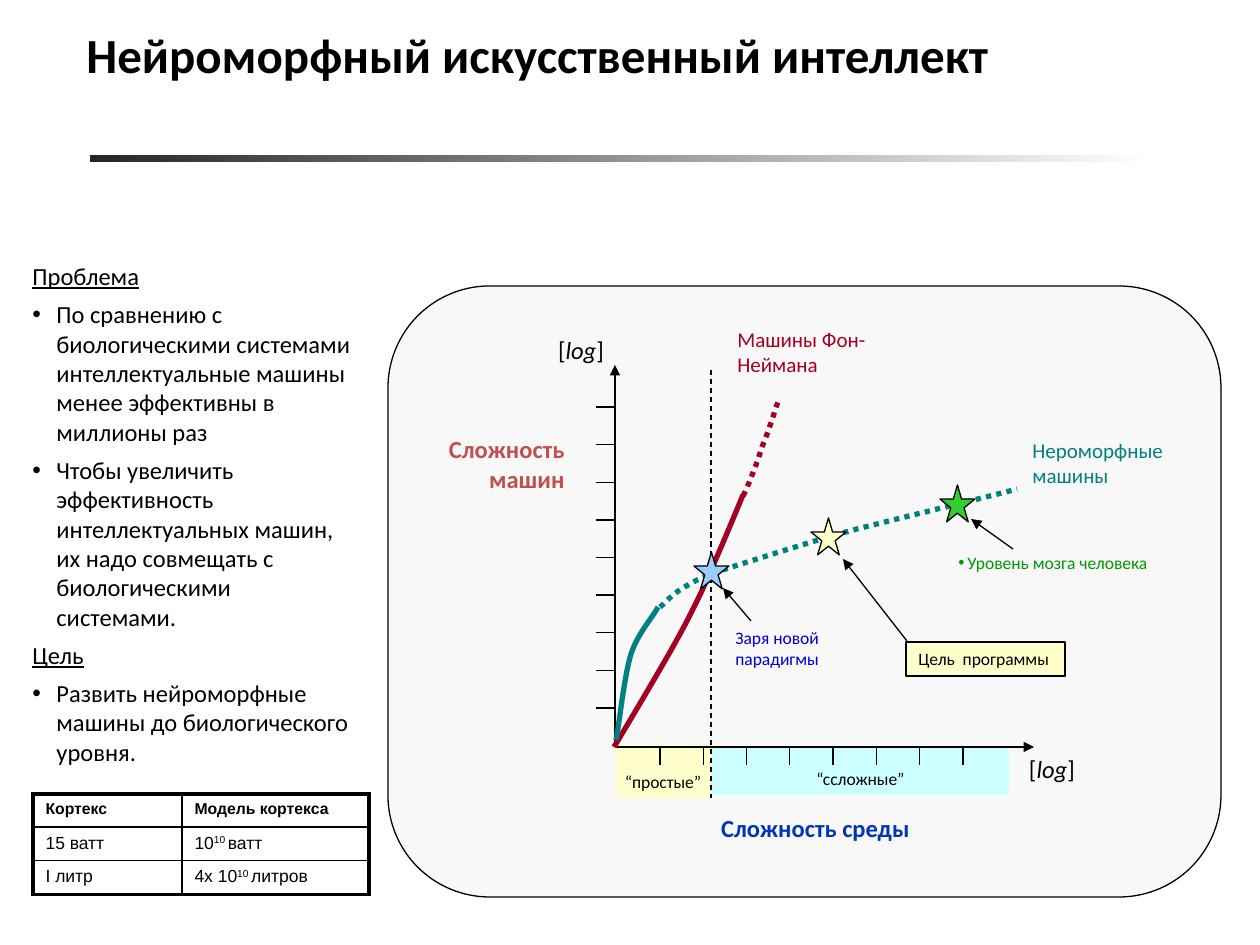
from lxml import etree
from pptx import Presentation
from pptx.dml.color import RGBColor
from pptx.enum.dml import MSO_LINE
from pptx.enum.shapes import MSO_CONNECTOR, MSO_SHAPE
from pptx.enum.text import MSO_ANCHOR, PP_ALIGN
from pptx.oxml.ns import qn
from pptx.util import Emu, Pt

PX = 914400 / 126
STRAIGHT = MSO_CONNECTOR.STRAIGHT
RECT, ROUND_RECT, STAR = MSO_SHAPE.RECTANGLE, MSO_SHAPE.ROUNDED_RECTANGLE, MSO_SHAPE.STAR_5_POINT
DASH, DOTS = MSO_LINE.DASH, MSO_LINE.ROUND_DOT
LEFT, CENTER, RIGHT = PP_ALIGN.LEFT, PP_ALIGN.CENTER, PP_ALIGN.RIGHT
TOP, MIDDLE, BOTTOM = MSO_ANCHOR.TOP, MSO_ANCHOR.MIDDLE, MSO_ANCHOR.BOTTOM

BLACK = RGBColor(0x00, 0x00, 0x00)
WHITE = RGBColor(0xFF, 0xFF, 0xFF)
CHARCOAL = RGBColor(0x26, 0x26, 0x26)
PANEL_GRAY = RGBColor(0xF8, 0xF8, 0xF8)
CRIMSON = RGBColor(0xA5, 0x00, 0x21)
TEAL = RGBColor(0x00, 0x80, 0x80)
BRICK = RGBColor(0xC0, 0x50, 0x4D)
GREEN = RGBColor(0x00, 0x99, 0x00)
STAR_GREEN = RGBColor(0x33, 0xCC, 0x33)
BLUE = RGBColor(0x00, 0x00, 0xCC)
ROYAL = RGBColor(0x02, 0x35, 0xB4)
SKY = RGBColor(0x99, 0xCC, 0xFF)
CREAM = RGBColor(0xFF, 0xFF, 0xCC)
AQUA = RGBColor(0xCC, 0xFF, 0xFF)

presentation = Presentation()
presentation.slide_width, presentation.slide_height = Emu(9144000), Emu(6858000)
slide = presentation.slides.add_slide(presentation.slide_layouts[6])
shapes = slide.shapes


def write(text, paragraph, size=14, color=BLACK, font="Calibri", bold=False,
          italic=False, underline=False, raised=False, align=LEFT, bullet=0):
    """Add one run; bullet is the hanging indent in px."""
    run = paragraph.add_run()
    run.text = text
    run.font.size, run.font.name = Pt(size), font
    run.font.bold, run.font.italic, run.font.underline = bold, italic, underline
    run.font.color.rgb = color
    if raised:
        run.font._element.set("baseline", "30000")
    paragraph.alignment = align
    if bullet:
        properties = paragraph._p.get_or_add_pPr()
        properties.set("marL", str(int(bullet * PX)))
        properties.set("indent", str(int(-bullet * PX)))
        etree.SubElement(properties, qn("a:buFont")).set("typeface", "Arial")
        etree.SubElement(properties, qn("a:buChar")).set("char", "•")


def draw_line(x1, y1, x2, y2, width=0.75, dash=None, arrow=False):
    line = shapes.add_connector(STRAIGHT, *(Emu(int(v * PX)) for v in (x1, y1, x2, y2)))
    line.line.color.rgb, line.line.width = BLACK, Pt(width)
    if dash:
        line.line.dash_style = dash
    properties = line._element.spPr
    if arrow:
        etree.SubElement(properties.find(qn("a:ln")), qn("a:tailEnd")).set("type", "triangle")
    etree.SubElement(properties, qn("a:effectLst"))


# Title rule, panel, zones under the axis and the goal box
blocks = [
    (RECT, 90, 155, 1061, 7, None, False, "", BOTTOM),
    (ROUND_RECT, 388, 286, 833, 611, PANEL_GRAY, True, "", BOTTOM),
    (RECT, 616, 745, 94, 53, CREAM, False, "“простые”", BOTTOM),
    (RECT, 712, 746, 297, 49, AQUA, False, "“cсложные”", BOTTOM),
    (RECT, 906, 642, 159, 34, CREAM, True, "Цель  программы", TOP),
]
for kind, x, y, w, h, color, outlined, caption, anchor in blocks:
    block = shapes.add_shape(kind, *(Emu(int(v * PX)) for v in (x, y, w, h)))
    block.shadow.inherit = False
    if color:
        block.fill.solid()
        block.fill.fore_color.rgb = color
    else:
        block.fill.gradient()
        block.fill.gradient_angle = 0
        for stop, shade, position in zip(block.fill.gradient_stops, (CHARCOAL, WHITE), (0, 1)):
            stop.color.rgb, stop.position = shade, position
    if outlined:
        block.line.color.rgb, block.line.width = BLACK, Pt(0.75)
    else:
        block.line.fill.background()
    if caption:
        block.text_frame.word_wrap = False
        block.text_frame.vertical_anchor = anchor
        write(caption, block.text_frame.paragraphs[0], size=10,
              align=LEFT if outlined else CENTER)

# Axes with ticks, and the border between the zones
draw_line(615, 747, 615, 365, width=1, arrow=True)
draw_line(615, 747, 1034, 747, width=1, arrow=True)
draw_line(711, 370, 711, 798, dash=DASH)
for i in range(9):
    tick_y = 407 + 301 * i / 8
    draw_line(615, tick_y, 596, tick_y)
for i in range(8):
    tick_x = 660 + 303 * i / 7
    draw_line(tick_x, 747, tick_x, 765)

# Growth curves: a start point, then three Bézier points per piece
curves = [
    (CRIMSON, None, [(614, 747), (624, 731), (654, 680), (669, 654), (683, 629), (688, 620),
                     (701, 593), (713, 567), (735, 515), (743, 495)]),
    (TEAL, DOTS, [(660, 607), (664, 604), (674, 592), (688, 585), (701, 577), (713, 573),
                  (741, 564), (767, 556), (806, 543), (853, 530), (900, 518), (983, 498),
                  (1017, 489)]),
    (CRIMSON, DOTS, [(743, 496), (747, 489), (757, 464), (762, 447), (769, 431), (775, 410),
                     (779, 399)]),
    (TEAL, None, [(616, 740), (619, 726), (624, 677), (631, 654), (638, 633), (653, 617),
                  (658, 607)]),
]
for color, dash, knots in curves:
    builder = shapes.build_freeform(*knots[0], scale=PX)
    builder.add_line_segments(knots[1:], close=False)
    curve = builder.convert_to_shape()
    # Join each three straight steps into one cubic piece
    segments = list(curve._element.iter(qn("a:lnTo")))
    for k in range(0, len(segments), 3):
        piece = etree.Element(qn("a:cubicBezTo"))
        segments[k].addprevious(piece)
        for segment in segments[k:k + 3]:
            piece.append(segment[0])
            segment.getparent().remove(segment)
    curve.shadow.inherit = False
    curve.fill.background()
    curve.line.color.rgb, curve.line.width = color, Pt(3)
    if dash:
        curve.line.dash_style = dash

# Milestone stars and the arrows that point to them
for x, y, color in [(694, 552, SKY), (811, 518, CREAM), (940, 485, STAR_GREEN)]:
    star = shapes.add_shape(STAR, *(Emu(int(v * PX)) for v in (x, y, 35, 37)))
    star.shadow.inherit = False
    star.fill.solid()
    star.fill.fore_color.rgb = color
    star.line.color.rgb, star.line.width = BLACK, Pt(0.75)
for ends in [(1013, 549, 971, 519), (751, 621, 723, 588), (907, 641, 843, 559)]:
    draw_line(*ends, arrow=True)

# Title and chart labels
labels = [
    (("Нейроморфный искусственный интеллект",), 74, 18, 1066, 72, True, dict(size=28, bold=True)),
    (("Машины Фон-Неймана",), 725, 320, 218, 63, True, dict(size=12, color=CRIMSON)),
    (("Нероморфные машины",), 1020, 431, 173, 63, True, dict(size=12, color=TEAL)),
    (("Сложность машин",), 383, 428, 194, 72, True, dict(color=BRICK, bold=True, align=RIGHT)),
    (("Сложность среды",), 632, 807, 367, 43, True, dict(color=ROYAL, bold=True, align=CENTER)),
    (("Уровень мозга человека",), 946, 546, 282, 34, True, dict(size=10, color=GREEN, bullet=9)),
    (("Заря новой парадигмы",), 723, 621, 164, 55, True, dict(size=10, color=BLUE)),
    (("[", "log", "]"), 545, 329, 72, 42, False, dict(align=CENTER)),
    (("[", "log", "]"), 1016, 748, 72, 42, False, dict(align=CENTER)),
]
for parts, x, y, w, h, wrap, style in labels:
    label = shapes.add_textbox(*(Emu(int(v * PX)) for v in (x, y, w, h))).text_frame
    label.word_wrap = wrap
    label.vertical_anchor = MIDDLE if style.get("size") == 28 else TOP
    for part in parts:
        write(part, label.paragraphs[0], italic=part == "log", **style)

# Problem and goal
statement = shapes.add_textbox(*(Emu(int(v * PX)) for v in (20, 255, 344, 539))).text_frame
statement.word_wrap = True
lines = [
    "Проблема",
    "По сравнению с биологическими системами интеллектуальные машины менее эффективны в миллионы раз",
    "Чтобы увеличить эффективность интеллектуальных машин, их надо совмещать с биологическими системами.",
    "Цель",
    "Развить нейроморфные машины до биологического уровня.",
]
for i, line in enumerate(lines):
    paragraph = statement.paragraphs[0] if i == 0 else statement.add_paragraph()
    paragraph.space_after = Pt(4.9)
    heading = line in ("Проблема", "Цель")
    write(line, paragraph, underline=heading, bullet=0 if heading else 24)

# Cortex comparison; the second part of a cell is superscript
rows = [
    [("Кортекс",), ("Модель кортекса",)],
    [("15 ватт",), ("10", "10 ", "ватт")],
    [("I литр",), ("4x 10", "10 ", "литров")],
]
comparison = shapes.add_table(3, 2, *(Emu(int(v * PX)) for v in (33, 794, 336, 99))).table
comparison.first_row = comparison.horz_banding = False
for column, width in zip(comparison.columns, (149, 187)):
    column.width = Emu(int(width * PX))
for r, row in enumerate(rows):
    for c, parts in enumerate(row):
        cell = comparison.cell(r, c)
        for i, part in enumerate(parts):
            write(part, cell.text_frame.paragraphs[0], size=9 if r == 0 else 10,
                  font="Arial", bold=r == 0, raised=i == 1)
        outer = {"a:lnL": c == 0, "a:lnR": c == 1, "a:lnT": r == 0, "a:lnB": r == 2}
        properties = cell._tc.get_or_add_tcPr()
        for side, thick in outer.items():
            border = etree.SubElement(properties, qn(side), w=str(Pt(2.25 if thick else 1)))
            fill = etree.SubElement(border, qn("a:solidFill"))
            etree.SubElement(fill, qn("a:srgbClr"), val=str(BLACK))
        cell.fill.background()

presentation.save("out.pptx")
